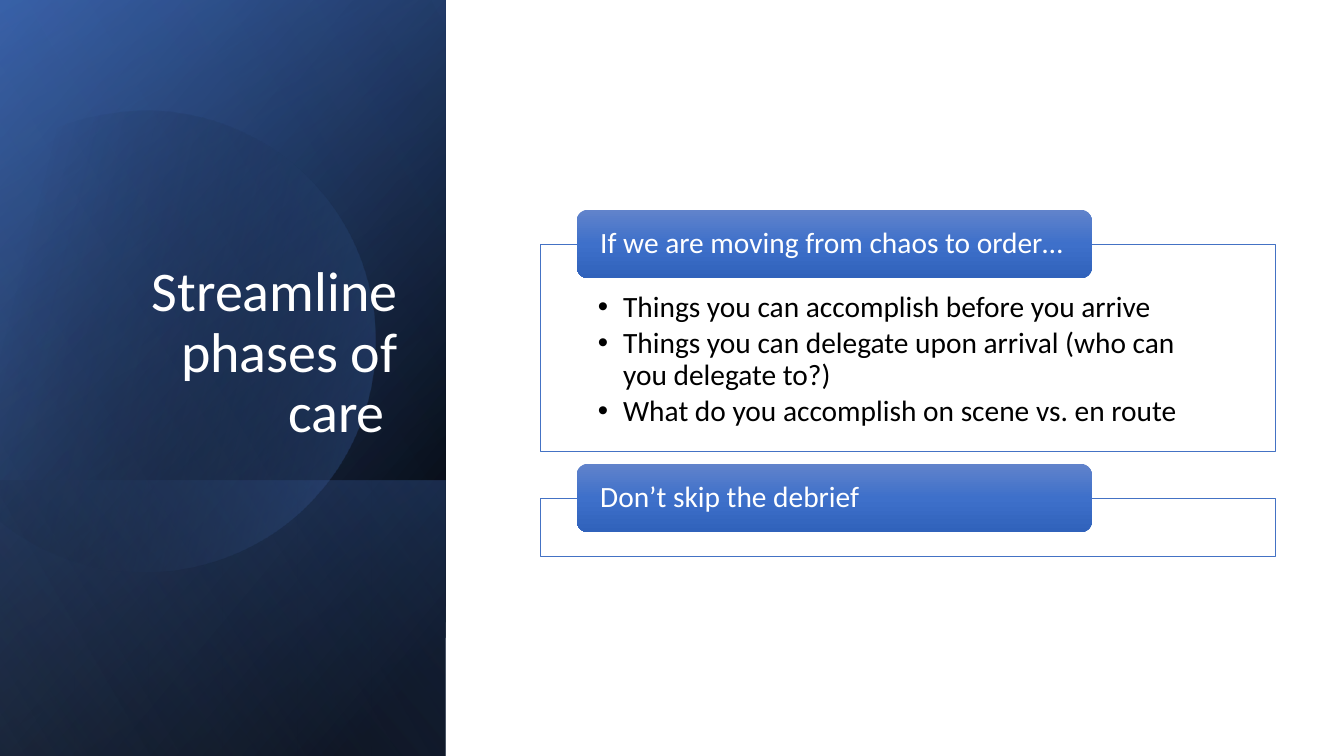
from lxml.etree import SubElement
from pptx import Presentation
from pptx.dml.color import RGBColor
from pptx.enum.shapes import MSO_SHAPE
from pptx.enum.text import MSO_ANCHOR, PP_ALIGN
from pptx.oxml import parse_xml
from pptx.oxml.ns import nsdecls, qn
from pptx.util import Inches, Pt

HUE = {"white": "FFFFFF", "black": "000000", "navy": "2F5597", "blue": "4472C4",
       "sky": "8FAADC", "top": "6183CB", "mid": "3E70CA", "low": "3062BB"}


def shade(shape, stops, angle):
    shape.shadow.inherit = False
    shape.line.fill.background()
    marks = "".join(
        f'<a:gs pos="{pos * 1000}"><a:srgbClr val="{HUE[hue]}">'
        f'<a:alpha val="{alpha * 1000}"/></a:srgbClr></a:gs>'
        for pos, hue, alpha in stops)
    fill = parse_xml(
        f'<a:gradFill {nsdecls("a")} rotWithShape="1"><a:gsLst>{marks}</a:gsLst>'
        f'<a:lin ang="{angle * 60000}" scaled="0"/></a:gradFill>')
    shape._element.spPr.find(qn("a:ln")).addprevious(fill)


def write(para, text, size, hue):
    para.line_spacing = 0.9
    run = para.add_run()
    run.text = text
    run.font.size = Pt(size)
    run.font.name = "Calibri"
    run.font.color.rgb = RGBColor.from_string(HUE[hue])


deck = Presentation()
deck.slide_width, deck.slide_height = Inches(13.33), Inches(7.5)
slide = deck.slides.add_slide(deck.slide_layouts[6])
shapes = slide.shapes

full = (-1.54, 1.54, 7.5, 4.42)
base = (0.84, 3.93, 2.74, 4.42)
panels = [
    (full, [(8, "black", 100), (100, "navy", 100)], 50),
    (full, [(0, "black", 0), (99, "blue", 46)], 30),
    (base, [(2, "blue", 29), (100, "black", 30)], 130),
    (None, [(14, "black", 0), (100, "blue", 43)], 14),
    (full, [(0, "black", 0), (99, "sky", 11)], 120),
]
start = (1.49, 1.1)
knots = [
    (2.46, 1.12), (3.35, 1.77), (3.63, 2.75),
    (3.98, 3.97), (3.28, 5.23), (2.07, 5.58),
    (1.31, 5.8), (0.53, 5.61), (-0.03, 5.14),
    (-0.15, 5.03), (-0.15, 1.75), (0, 1.61),
    (0.23, 1.42), (0.5, 1.28), (0.8, 1.19),
    (1.03, 1.13), (1.26, 1.1), start,
]
bends = (0, 3, 6, 12, 15)

for box, stops, angle in panels:
    if box:
        panel = shapes.add_shape(MSO_SHAPE.RECTANGLE, *map(Inches, box))
        panel.rotation = 90
        panel._element.spPr.find(qn("a:xfrm")).set("flipH", "1")
    else:
        outline = shapes.build_freeform(*map(Inches, start))
        outline.add_line_segments([tuple(map(Inches, knot)) for knot in knots])
        panel = outline.convert_to_shape()
        lines = list(panel._element.spPr.iter(qn("a:lnTo")))
        for bend in bends:
            first, *rest = lines[bend:bend + 3]
            first.tag = qn("a:cubicBezTo")
            for line in rest:
                first.append(line[0])
                line.getparent().remove(line)
    shade(panel, stops, angle)

title = shapes.add_textbox(Inches(0.63), Inches(1.84), Inches(3.41), Inches(2.62))
frame = title.text_frame
frame.word_wrap = True
frame.vertical_anchor = MSO_ANCHOR.BOTTOM
frame.paragraphs[0].alignment = PP_ALIGN.RIGHT
write(frame.paragraphs[0], "Streamline phases of care ", 40, "white")

cards = [
    (2.42, 2.06, "If we are moving from chaos to order…", [
        "Things you can accomplish before you arrive",
        "Things you can delegate upon arrival (who can you delegate to?)",
        "What do you accomplish on scene vs. en route"]),
    (4.94, 0.58, "Don’t skip the debrief", []),
]
for top, height, head, items in cards:
    card = shapes.add_shape(MSO_SHAPE.RECTANGLE, Inches(5.36), Inches(top),
                            Inches(7.29), Inches(height))
    card.shadow.inherit = False
    card.fill.solid()
    card.fill.fore_color.rgb = RGBColor.from_string(HUE["white"])
    card.line.color.rgb = RGBColor.from_string(HUE["blue"])
    card.line.width = Pt(0.5)
    frame = card.text_frame
    frame.word_wrap = True
    frame.vertical_anchor = MSO_ANCHOR.TOP
    frame.margin_left = frame.margin_right = Inches(0.57)
    frame.margin_top, frame.margin_bottom = Inches(0.48), Inches(0.16)
    for row, item in enumerate(items):
        para = frame.add_paragraph() if row else frame.paragraphs[0]
        props = para._p.get_or_add_pPr()
        props.set("marL", str(Inches(0.25)))
        props.set("indent", str(Inches(-0.25)))
        SubElement(props, qn("a:buFont")).set("typeface", "Arial")
        SubElement(props, qn("a:buChar")).set("char", "•")
        para.alignment = PP_ALIGN.LEFT
        para.space_after = Pt(3)
        write(para, item, 21, "black")

    tab = shapes.add_shape(MSO_SHAPE.ROUNDED_RECTANGLE, Inches(5.72),
                           Inches(top - 0.34), Inches(5.11), Inches(0.68))
    shade(tab, [(0, "top", 100), (50, "mid", 100), (100, "low", 100)], 90)
    frame = tab.text_frame
    frame.word_wrap = True
    frame.vertical_anchor = MSO_ANCHOR.MIDDLE
    frame.margin_left = frame.margin_right = Inches(0.2)
    frame.margin_top = frame.margin_bottom = 0
    frame.paragraphs[0].alignment = PP_ALIGN.LEFT
    write(frame.paragraphs[0], head, 21, "white")

deck.save("out.pptx")
